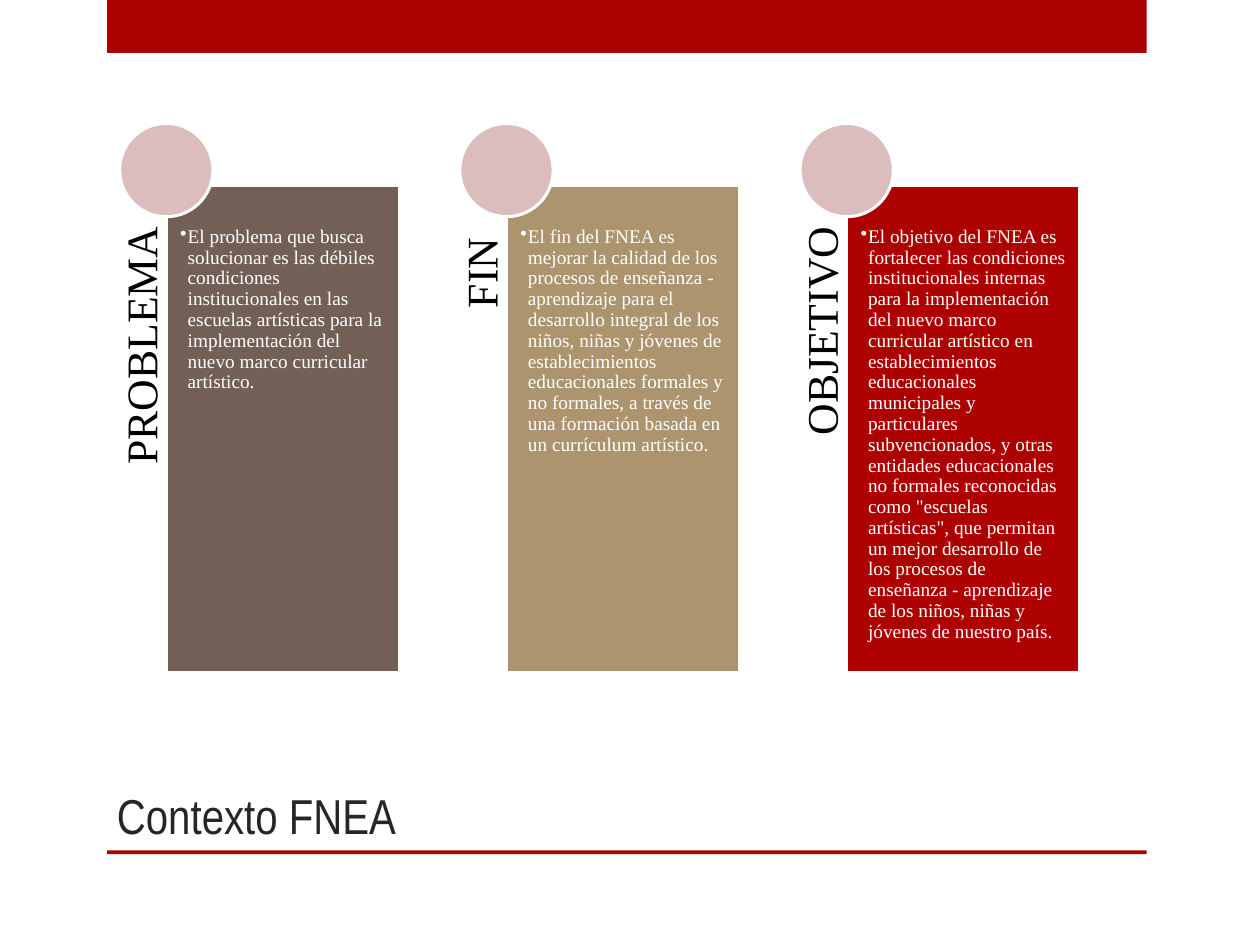
from lxml.etree import SubElement
from pptx import Presentation
from pptx.dml.color import RGBColor
from pptx.enum.shapes import MSO_SHAPE as Shape
from pptx.enum.text import MSO_ANCHOR as Anchor, PP_ALIGN as Align
from pptx.oxml.ns import qn
from pptx.util import Inches, Pt

RED = RGBColor(0xAD, 0x01, 0x01)
BROWN = RGBColor(0x72, 0x60, 0x56)
TAN = RGBColor(0xAC, 0x95, 0x6E)
PINK = RGBColor(0xDB, 0xBD, 0xBD)
WHITE = RGBColor(0xFF, 0xFF, 0xFF)
BLACK = RGBColor(0x00, 0x00, 0x00)
CHARCOAL = RGBColor(0x26, 0x26, 0x26)

TITLE = "Contexto FNEA"
COLUMNS = [
    ("PROBLEMA", BROWN,
     "El problema que busca solucionar es las débiles condiciones "
     "institucionales en las escuelas artísticas para la implementación del "
     "nuevo marco curricular artístico."),
    ("FIN ", TAN,
     "El fin del FNEA es mejorar la calidad de los procesos de enseñanza - "
     "aprendizaje para el desarrollo integral de los niños, niñas y jóvenes "
     "de establecimientos educacionales formales y no formales, a través de "
     "una formación basada en un currículum artístico."),
    ("OBJETIVO", RED,
     "El objetivo del FNEA es fortalecer las condiciones institucionales "
     "internas para la implementación del nuevo marco curricular artístico "
     "en establecimientos educacionales municipales y particulares "
     "subvencionados, y otras entidades educacionales no formales "
     'reconocidas como "escuelas artísticas", que permitan un mejor '
     "desarrollo de los procesos de enseñanza - aprendizaje de los niños, "
     "niñas y jóvenes de nuestro país."),
]

# Column geometry, in inches; offsets run from the left of the circle
FIRST_LEFT, PITCH = 0.95, 2.7
PANEL_OFFSET, LABEL_OFFSET = 0.37, -1.75

prs = Presentation()
prs.slide_width, prs.slide_height = Inches(10), Inches(7.5)
slide = prs.slides.add_slide(prs.slide_layouts[6])


def add_block(kind, box, fill, outline=None):
    block = slide.shapes.add_shape(kind, *map(Inches, box))
    block.shadow.inherit = False
    block.fill.solid()
    block.fill.fore_color.rgb = fill
    if outline is None:
        block.line.fill.background()
    else:
        block.line.color.rgb = outline
        block.line.width = Pt(1.75)
    return block


def add_text_box(box):
    return slide.shapes.add_textbox(*map(Inches, box))


def write(shape, text, font_name, size, color, align=Align.LEFT,
          anchor=Anchor.TOP, insets=(0.1, 0.05, 0.1, 0.05), spacing=0.9):
    frame = shape.text_frame
    frame.word_wrap = True
    frame.vertical_anchor = anchor
    (frame.margin_left, frame.margin_top,
     frame.margin_right, frame.margin_bottom) = map(Inches, insets)
    paragraph = frame.paragraphs[0]
    paragraph.text = text
    paragraph.alignment = align
    paragraph.line_spacing = spacing
    paragraph.font.name = font_name
    paragraph.font.size = Pt(size)
    paragraph.font.color.rgb = color
    return paragraph


def add_bullet(paragraph, indent):
    props = paragraph._p.get_or_add_pPr()
    props.set("marL", str(Inches(indent)))
    props.set("indent", str(-Inches(indent)))
    SubElement(props, qn("a:buChar")).set("char", "•")


# Top band, title and rule
add_block(Shape.RECTANGLE, (0.85, 0, 8.25, 0.42), RED)
add_block(Shape.RECTANGLE, (0.85, 6.75, 8.25, 0.03), RED)
write(add_text_box((0.83, 5, 7.42, 1.75)), TITLE, "Arial Narrow", 28,
      CHARCOAL, anchor=Anchor.BOTTOM, spacing=1.0)

# Columns: vertical label, panel with its bullet, circle on the corner
for index, (label, color, body) in enumerate(COLUMNS):
    left = FIRST_LEFT + index * PITCH

    label_box = add_text_box((left + LABEL_OFFSET, 3.22, 3.87, 0.37))
    label_box.rotation = 270
    write(label_box, label, "Times New Roman", 25, BLACK,
          align=Align.RIGHT, insets=(0, 0, 0.33, 0))

    panel = add_block(Shape.RECTANGLE, (left + PANEL_OFFSET, 1.47, 1.85, 3.87),
                      color, WHITE)
    add_bullet(write(panel, body, "Times New Roman", 11, WHITE,
                     insets=(0.11, 0.33, 0.11, 0.11)), 0.06)

    add_block(Shape.OVAL, (left, 0.98, 0.74, 0.74), PINK, WHITE)

prs.save("out.pptx")
